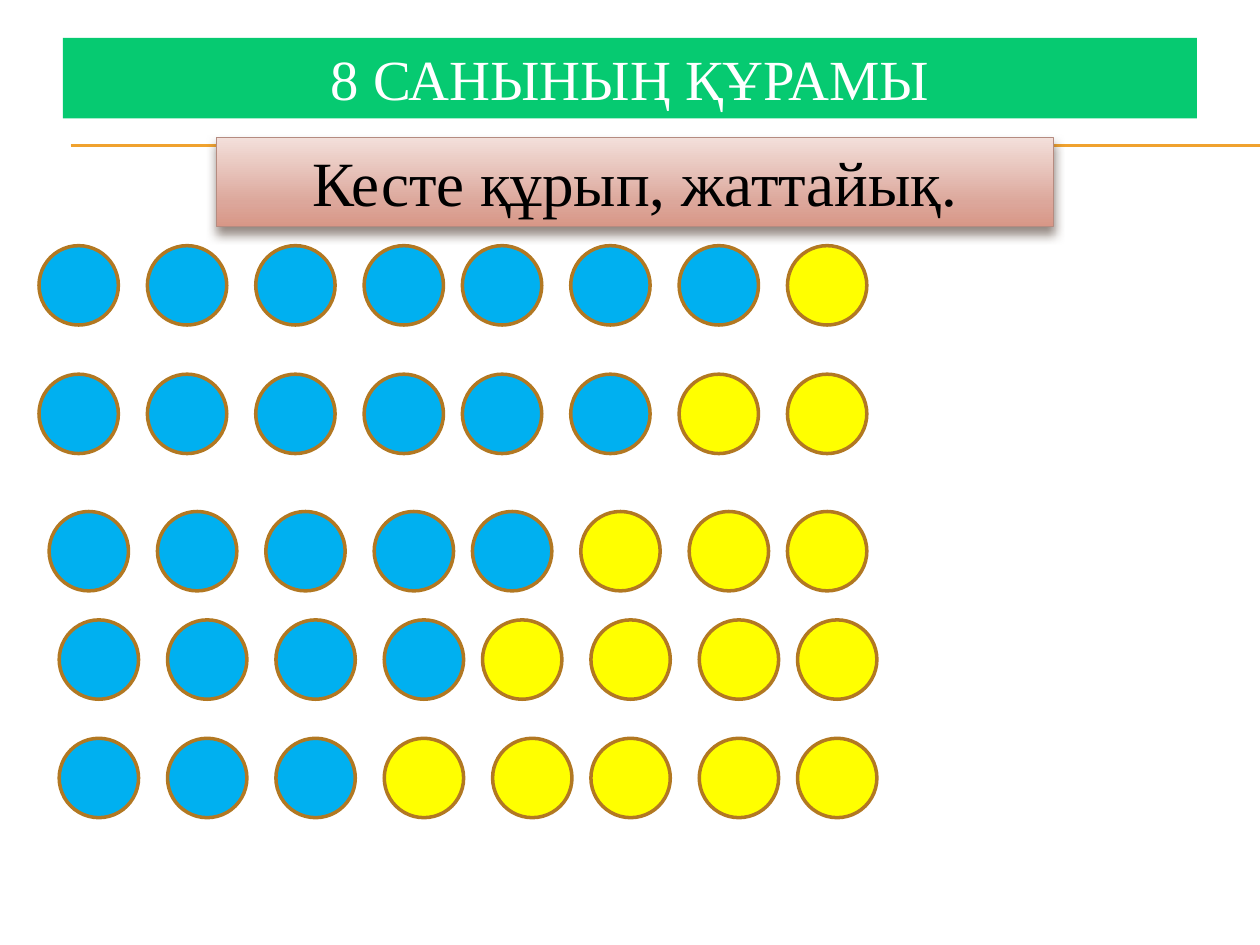
from copy import deepcopy

from lxml import etree
from pptx import Presentation
from pptx.dml.color import RGBColor
from pptx.enum.shapes import MSO_CONNECTOR, MSO_SHAPE
from pptx.enum.text import MSO_ANCHOR, PP_ALIGN
from pptx.oxml.ns import qn
from pptx.util import Pt

PX = 9144  # 100 px to the inch
RECTANGLE = MSO_SHAPE.RECTANGLE
OVAL = MSO_SHAPE.OVAL
STRAIGHT = MSO_CONNECTOR.STRAIGHT
CENTER = PP_ALIGN.CENTER
TOP = MSO_ANCHOR.TOP
MIDDLE = MSO_ANCHOR.MIDDLE

FONT = "Times New Roman"
BLUE = "00B0F0"
YELLOW = "FFFF00"


def color(hex_value):
    return RGBColor.from_string(hex_value)


def write_centered(shape, text, size, hex_value, anchor):
    frame = shape.text_frame
    frame.word_wrap = True
    frame.vertical_anchor = anchor
    paragraph = frame.paragraphs[0]
    paragraph.alignment = CENTER
    run = paragraph.add_run()
    run.text = text
    run.font.name = FONT
    run.font.size = Pt(size)
    run.font.color.rgb = color(hex_value)


presentation = Presentation()
presentation.slide_width = 1000 * PX
presentation.slide_height = 750 * PX
slide = presentation.slides.add_slide(presentation.slide_layouts[6])
shapes = slide.shapes

# Double rule under the title
for y in (115, 116):
    rule = shapes.add_connector(STRAIGHT, 56 * PX, y * PX, 1000 * PX, y * PX)
    rule.line.color.rgb = color("F0A22E")
    rule.line.width = Pt(0.75)
    etree.SubElement(rule._element.spPr, qn("a:effectLst"))

# Title band
title = shapes.add_shape(RECTANGLE, 50 * PX, 30 * PX, 900 * PX, 64 * PX)
title.shadow.inherit = False
title.fill.solid()
title.fill.fore_color.rgb = color("06CA71")
title.line.fill.background()
write_centered(title, "8 САНЫНЫҢ ҚҰРАМЫ", 32.4, "FFFFFF", MIDDLE)

# Ways to split eight: left, top, blue count, circles followed by a narrow step
DIAMETER = 63
STEP = 86
NARROW_STEP = 78
rows = [
    (31, 195, 7, (3,)),
    (31, 297, 6, (3,)),
    (39, 406, 5, (3, 6)),
    (47, 492, 4, (3, 6)),
    (47, 586, 3, (4, 6)),
]
for left, top, blue_count, narrow_after in rows:
    for index in range(8):
        circle = shapes.add_shape(OVAL, left * PX, top * PX, DIAMETER * PX, DIAMETER * PX)
        circle.shadow.inherit = False
        circle.fill.solid()
        circle.fill.fore_color.rgb = color(BLUE if index < blue_count else YELLOW)
        circle.line.color.rgb = color("B27822")
        circle.line.width = Pt(2)
        left += NARROW_STEP if index in narrow_after else STEP

# Task banner with a gradient and a soft shadow
banner = shapes.add_shape(RECTANGLE, 172 * PX, 109 * PX, 664 * PX, 71 * PX)
banner.line.color.rgb = color("B58B80")
banner.line.width = Pt(0.79)
banner.fill.gradient()
banner.fill.gradient_angle = 270
properties = banner._element.spPr
stop_list = properties.find(".//" + qn("a:gsLst"))
stop_list.append(deepcopy(stop_list[0]))
gradient = [(0, "F3E0DB"), (0.72, "DCA79B"), (1, "D89787")]
for stop, (position, hex_value) in zip(banner.fill.gradient_stops, gradient):
    stop.position = position
    stop.color.rgb = color(hex_value)

banner.shadow.inherit = False
effects = properties.find(qn("a:effectLst"))
shadow = etree.SubElement(
    effects, qn("a:outerShdw"),
    blurRad=str(Pt(6)), dist=str(Pt(4)), dir="5400000", rotWithShape="0",
)
shadow_color = etree.SubElement(shadow, qn("a:srgbClr"), val="4E3B30")
etree.SubElement(shadow_color, qn("a:alpha"), val="60000")
write_centered(banner, "Кесте құрып, жаттайық.", 36, "000000", TOP)

presentation.save("out.pptx")
